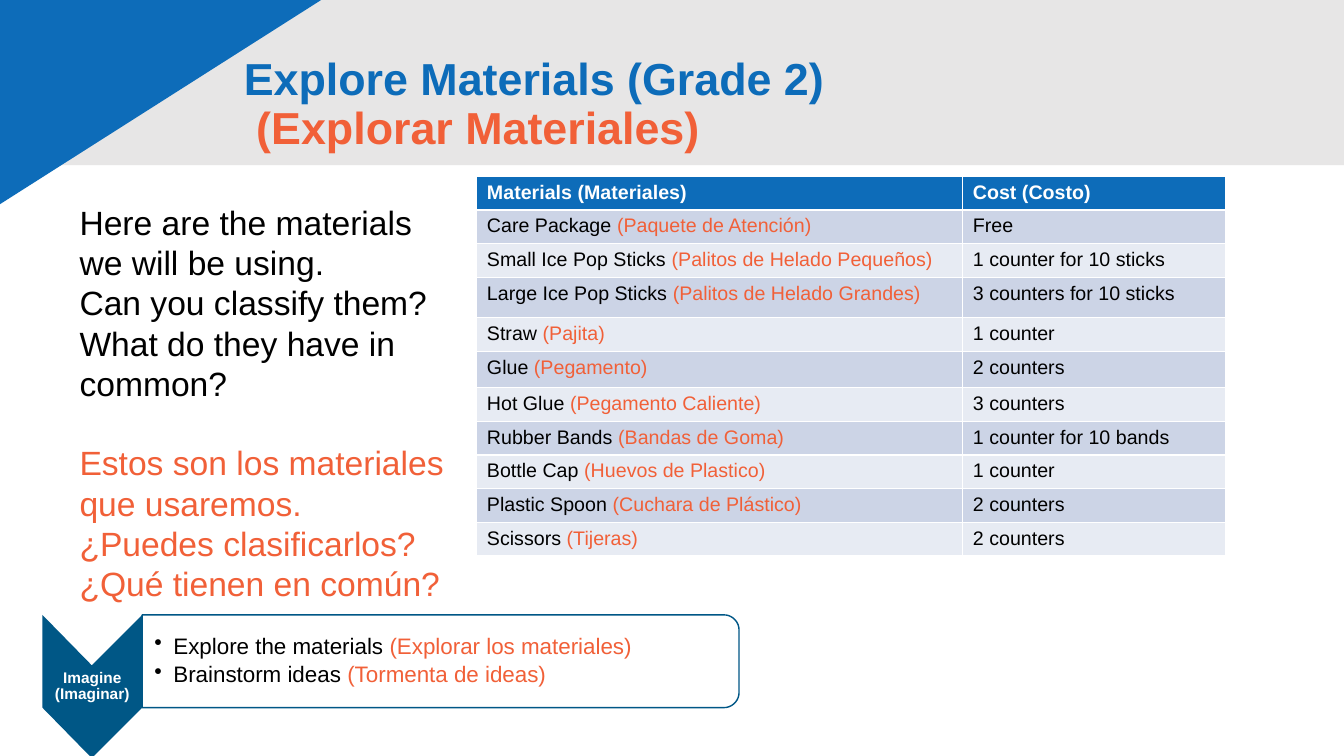
import math

import pptx
import pptx.util
import pptx.dml.color
import pptx.enum.shapes
import pptx.enum.text
import pptx.oxml
import pptx.oxml.ns

Inches, Pt = pptx.util.Inches, pptx.util.Pt
RGB = pptx.dml.color.RGBColor
SHAPE = pptx.enum.shapes.MSO_SHAPE
ALIGN = pptx.enum.text.PP_ALIGN
MIDDLE = pptx.enum.text.MSO_ANCHOR.MIDDLE

BLUE = RGB(0x0D, 0x6C, 0xB9)
NAVY = RGB(0x00, 0x57, 0x86)
ORANGE = RGB(0xF1, 0x60, 0x38)
GRAY = RGB(0xE7, 0xE6, 0xE6)
DARK = RGB(0xCC, 0xD4, 0xE6)
LIGHT = RGB(0xE7, 0xEB, 0xF3)
WHITE = RGB(0xFF, 0xFF, 0xFF)
BLACK = RGB(0, 0, 0)

# Content
TITLE = ("Explore Materials (Grade 2)", " (Explorar Materiales)")
ENGLISH = [
    "Here are the materials we will be using.",
    "Can you classify them?",
    "What do they have in common?",
]
SPANISH = [
    "Estos son los materiales que usaremos.",
    "¿Puedes clasificarlos?",
    "¿Qué tienen en común?",
]
HEAD = ("Materials (Materiales)", "Cost (Costo)")
ITEMS = [
    ("Care Package", "(Paquete de Atención)", "Free"),
    ("Small Ice Pop Sticks", "(Palitos de Helado Pequeños)", "1 counter for 10 sticks"),
    ("Large Ice Pop Sticks", "(Palitos de Helado Grandes)", "3 counters for 10 sticks"),
    ("Straw", "(Pajita)", "1 counter"),
    ("Glue", "(Pegamento)", "2 counters"),
    ("Hot Glue", "(Pegamento Caliente)", "3 counters"),
    ("Rubber Bands", "(Bandas de Goma)", "1 counter for 10 bands"),
    ("Bottle Cap", "(Huevos de Plastico)", "1 counter"),
    ("Plastic Spoon", "(Cuchara de Plástico)", "2 counters"),
    ("Scissors", "(Tijeras)", "2 counters"),
]
STAGE = "Imagine (Imaginar)"
STEPS = [
    ("Explore the materials", "(Explorar los materiales)"),
    ("Brainstorm ideas", "(Tormenta de ideas)"),
]
WIDTHS = (4.82, 2.61)
ROW = 0.33
TALL = {3: 0.4, 5: 0.36}

prs = pptx.Presentation()
prs.slide_width, prs.slide_height = Inches(13.33), Inches(7.5)
slide = prs.slides.add_slide(prs.slide_layouts[6])
shapes = slide.shapes


def assign(thing, values):
    for name, value in values.items():
        setattr(thing, name, value)


def write(para, text, color, size, bold=False):
    run = para.add_run()
    run.text = text
    assign(run.font, {"name": "Arial", "size": Pt(size), "bold": bold})
    run.font.color.rgb = color


def pair(para, first, second, size):
    write(para, first + " ", BLACK, size)
    write(para, second, ORANGE, size)


def paint(shape, fill, line=None):
    shape.shadow.inherit = False
    shape.fill.solid()
    shape.fill.fore_color.rgb = fill
    if line is None:
        shape.line.fill.background()
    else:
        shape.line.color.rgb = line
        shape.line.width = Pt(1)


def outline(points):
    # The builder rounds to whole units, so points go in as EMU
    spots = [(Inches(x), Inches(y)) for x, y in points]
    build = shapes.build_freeform(*spots[0], scale=1.0)
    build.add_line_segments(spots[1:], close=True)
    return build.convert_to_shape()


def frame(shape, pads=(0.1, 0.05, 0.1, 0.05), **values):
    left, top, right, base = (Inches(pad) for pad in pads)
    assign(shape.text_frame, {
        "word_wrap": True, "margin_left": left, "margin_top": top,
        "margin_right": right, "margin_bottom": base, **values})
    return shape.text_frame


def paras(box, count):
    return [box.paragraphs[0]] + [box.add_paragraph() for _ in range(count - 1)]


# Banner and corner
band = shapes.add_shape(SHAPE.RECTANGLE, Inches(-0.26), Inches(-0.19),
                        Inches(13.59), Inches(1.83))
paint(band, GRAY)
corner = shapes.add_shape(SHAPE.RIGHT_TRIANGLE, Inches(-2.57), Inches(-1.72),
                          Inches(8.46), Inches(5.38))
paint(corner, BLUE)
corner.rotation = 180
corner.element.spPr.find(pptx.oxml.ns.qn("a:xfrm")).set("flipH", "1")

# Stage arrow
left, mid, right = 0.42, 0.91, 1.41
top, base, notch = 6.1, 7.02, 0.5
arrow = outline([(right, top), (right, base), (mid, base + notch),
                 (left, base), (left, top), (mid, top + notch)])
paint(arrow, NAVY)
para = frame(arrow, (0.01, 0.47, 0.01, 0.47), vertical_anchor=MIDDLE).paragraphs[0]
assign(para, {"alignment": ALIGN.CENTER, "line_spacing": 0.9})
write(para, STAGE, WHITE, 11, True)

# Steps panel with round right corners
end, bend = 7.33, 0.15
turns = [math.radians(step * 10) for step in range(10)]
upper = [(end - bend + bend * math.sin(t), top + bend - bend * math.cos(t)) for t in turns]
lower = [(x, top + base - y) for x, y in reversed(upper)]
panel = outline([(right, top)] + upper + lower + [(right, base)])
paint(panel, WHITE, NAVY)
box = frame(panel, (0.12, 0.05, 0.05, 0.05), vertical_anchor=MIDDLE)
for para, step in zip(paras(box, len(STEPS)), STEPS):
    props = para._p.get_or_add_pPr()
    props.set("marL", str(Inches(0.19)))
    props.set("indent", str(Inches(-0.19)))
    props.append(pptx.oxml.parse_xml(
        '<a:buChar %s char="•"/>' % pptx.oxml.ns.nsdecls("a")))
    assign(para, {"alignment": ALIGN.LEFT, "line_spacing": 0.9, "space_after": Pt(3)})
    pair(para, *step, 16)

# Questions
asks = shapes.add_textbox(Inches(0.69), Inches(1.95), Inches(4.01), Inches(4.44))
lines = [(text, BLACK) for text in ENGLISH] + [(text, ORANGE) for text in SPANISH]
rows = paras(frame(asks), len(lines))
for para, (text, color) in zip(rows, lines):
    write(para, text, color, 24)
rows[len(ENGLISH)].space_before = Pt(28)

# Cost table
tall = [TALL.get(row, ROW) for row in range(len(ITEMS) + 1)]
table = shapes.add_table(len(tall), len(WIDTHS), Inches(4.73), Inches(1.75),
                         Inches(sum(WIDTHS)), Inches(sum(tall))).table
for col, width in zip(table.columns, WIDTHS):
    col.width = Inches(width)
for row, height in zip(table.rows, tall):
    row.height = Inches(height)
for col, text in enumerate(HEAD):
    write(table.cell(0, col).text_frame.paragraphs[0], text, WHITE, 14, True)
for row, (name, local, cost) in enumerate(ITEMS, 1):
    pair(table.cell(row, 0).text_frame.paragraphs[0], name, local, 14)
    write(table.cell(row, 1).text_frame.paragraphs[0], cost, BLACK, 14)
for row in range(len(tall)):
    for col in range(len(WIDTHS)):
        fill = table.cell(row, col).fill
        fill.solid()
        fill.fore_color.rgb = BLUE if row == 0 else (LIGHT, DARK)[row % 2]

# Title
title = shapes.add_textbox(Inches(2.32), Inches(0.32), Inches(9.7), Inches(1.45))
para = frame(title, vertical_anchor=MIDDLE).paragraphs[0]
para.line_spacing = 0.9
write(para, TITLE[0], BLUE, 32, True)
para.add_line_break()
write(para, TITLE[1], ORANGE, 32, True)

prs.save("out.pptx")
